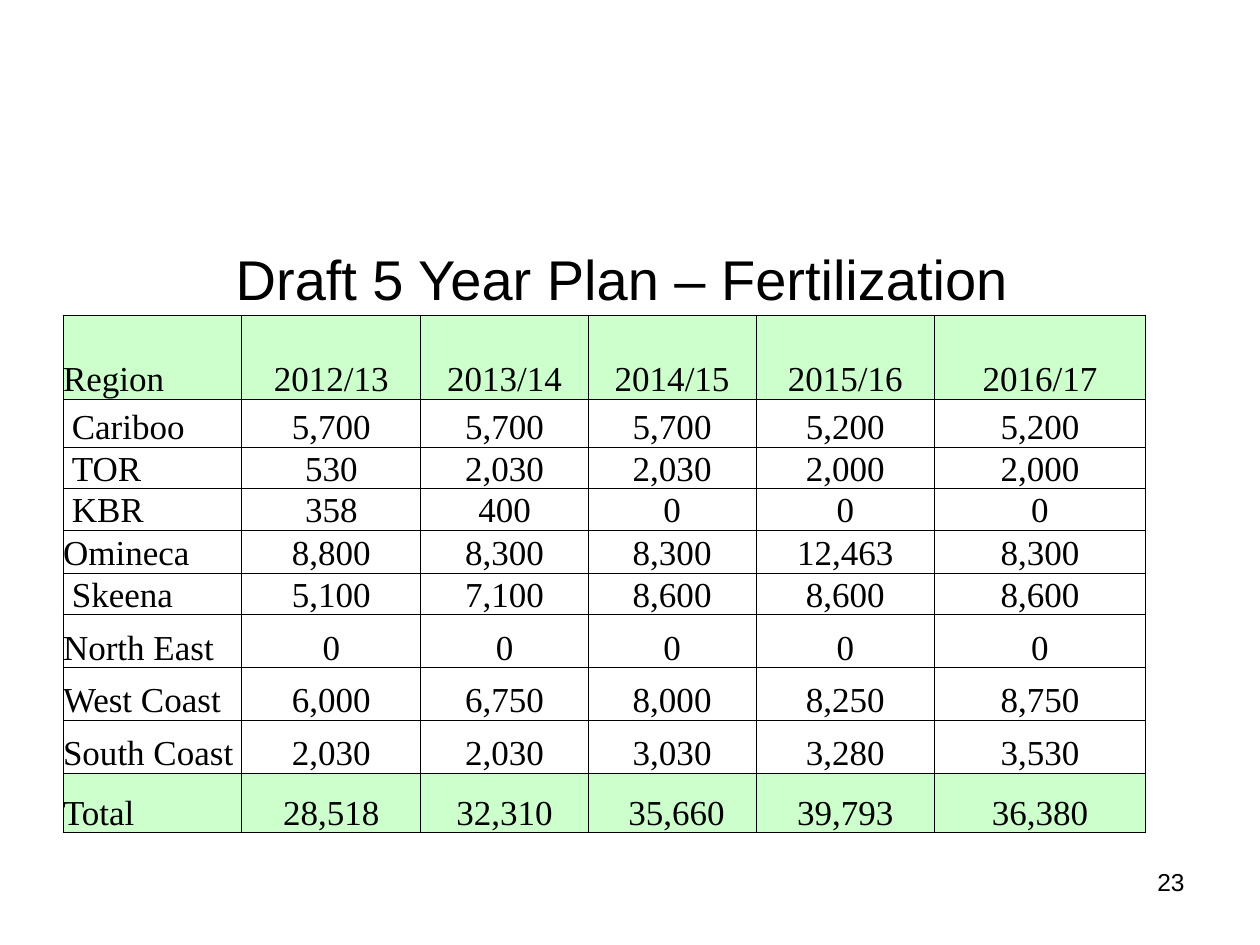
import pptx
import pptx.util
import pptx.dml.color
import pptx.enum.text
import pptx.oxml
import pptx.oxml.ns

Inches = pptx.util.Inches
Pt = pptx.util.Pt
ALIGN = pptx.enum.text.PP_ALIGN
ANCHOR = pptx.enum.text.MSO_ANCHOR

COLORS = {"text": "000000", "border": "000000", "band": "CCFFCC"}
YEARS = ["2012/13", "2013/14", "2014/15", "2015/16", "2016/17"]
HECTARES = {
    "Cariboo": [5700, 5700, 5700, 5200, 5200],
    "TOR": [530, 2030, 2030, 2000, 2000],
    "KBR": [358, 400, 0, 0, 0],
    "Omineca": [8800, 8300, 8300, 12463, 8300],
    "Skeena": [5100, 7100, 8600, 8600, 8600],
    "North East": [0, 0, 0, 0, 0],
    "West Coast": [6000, 6750, 8000, 8250, 8750],
    "South Coast": [2030, 2030, 3030, 3280, 3530],
}
INDENTED = {"Cariboo", "TOR", "KBR", "Skeena", "35,660"}
COL_WIDTHS = [1.42, 1.42, 1.33, 1.33, 1.42, 1.67]
ROW_HEIGHTS = [0.67, 0.38, 0.33, 0.33, 0.34, 0.33, 0.42, 0.42, 0.42, 0.47]


def rgb(name):
    return pptx.dml.color.RGBColor.from_string(COLORS[name])


def format_paragraph(p, size, font, align):
    p.alignment = align
    p.font.size = Pt(size)
    p.font.name = font
    p.font.color.rgb = rgb("text")


def place_title(slide, left, top, width, height):
    sp = slide.shapes.title
    sp.left, sp.top, sp.width, sp.height = left, top, width, height
    tf = sp.text_frame
    tf.text = "Draft 5 Year Plan – Fertilization "
    tf.auto_size = pptx.enum.text.MSO_AUTO_SIZE.NONE
    tf.vertical_anchor = ANCHOR.TOP
    tf.margin_top = Inches(0.11)
    tf.margin_bottom = 0
    format_paragraph(tf.paragraphs[0], 32, "Arial", ALIGN.CENTER)


def add_borders(cell):
    tcPr = cell._tc.get_or_add_tcPr()
    for i, side in enumerate(("lnL", "lnR", "lnT", "lnB")):
        tcPr.insert(i, pptx.oxml.parse_xml(
            f'<a:{side} {pptx.oxml.ns.nsdecls("a")} w="{Pt(0.5)}"><a:solidFill>'
            f'<a:srgbClr val="{COLORS["border"]}"/></a:solidFill></a:{side}>'))


def fill_cell(cell, text, align, banded):
    cell.text = text
    cell.vertical_anchor = ANCHOR.BOTTOM
    cell.margin_left = Inches(0.07) if text in INDENTED else 0
    cell.margin_right = cell.margin_top = cell.margin_bottom = 0
    format_paragraph(cell.text_frame.paragraphs[0], 20, "Times New Roman", align)
    if banded:
        cell.fill.solid()
        cell.fill.fore_color.rgb = rgb("band")
    else:
        cell.fill.background()
    add_borders(cell)


def place_plan_table(slide, left, top, width, height):
    totals = [sum(column) for column in zip(*HECTARES.values())]
    rows = [["Region", *YEARS]]
    for region, values in [*HECTARES.items(), ("Total", totals)]:
        rows.append([region, *(f"{v:,}" for v in values)])
    table = slide.shapes.add_table(
        len(rows), len(rows[0]), left, top, width, height).table
    for column, w in zip(table.columns, COL_WIDTHS):
        column.width = Inches(w)
    for row, h in zip(table.rows, ROW_HEIGHTS):
        row.height = Inches(h)
    for r, texts in enumerate(rows):
        for c, text in enumerate(texts):
            align = ALIGN.CENTER if c else ALIGN.LEFT
            fill_cell(table.cell(r, c), text, align, r in (0, len(rows) - 1))


def place_page_number(slide, left, top, width, height):
    tf = slide.shapes.add_textbox(left, top, width, height).text_frame
    tf.word_wrap = True
    tf.text = "23"
    format_paragraph(tf.paragraphs[0], 14, "Arial", ALIGN.RIGHT)


def main():
    prs = pptx.Presentation()
    prs.slide_width, prs.slide_height = Inches(10), Inches(7.5)
    slide = prs.slides.add_slide(prs.slide_layouts[5])
    place_title(slide, Inches(0.5), Inches(1.83), Inches(9), Inches(0.58))
    place_plan_table(slide, Inches(0.5), Inches(2.5), Inches(8.58), Inches(4.12))
    place_page_number(slide, Inches(7.17), Inches(6.83), Inches(2.33), Inches(0.52))
    prs.save("out.pptx")


if __name__ == "__main__":
    main()
